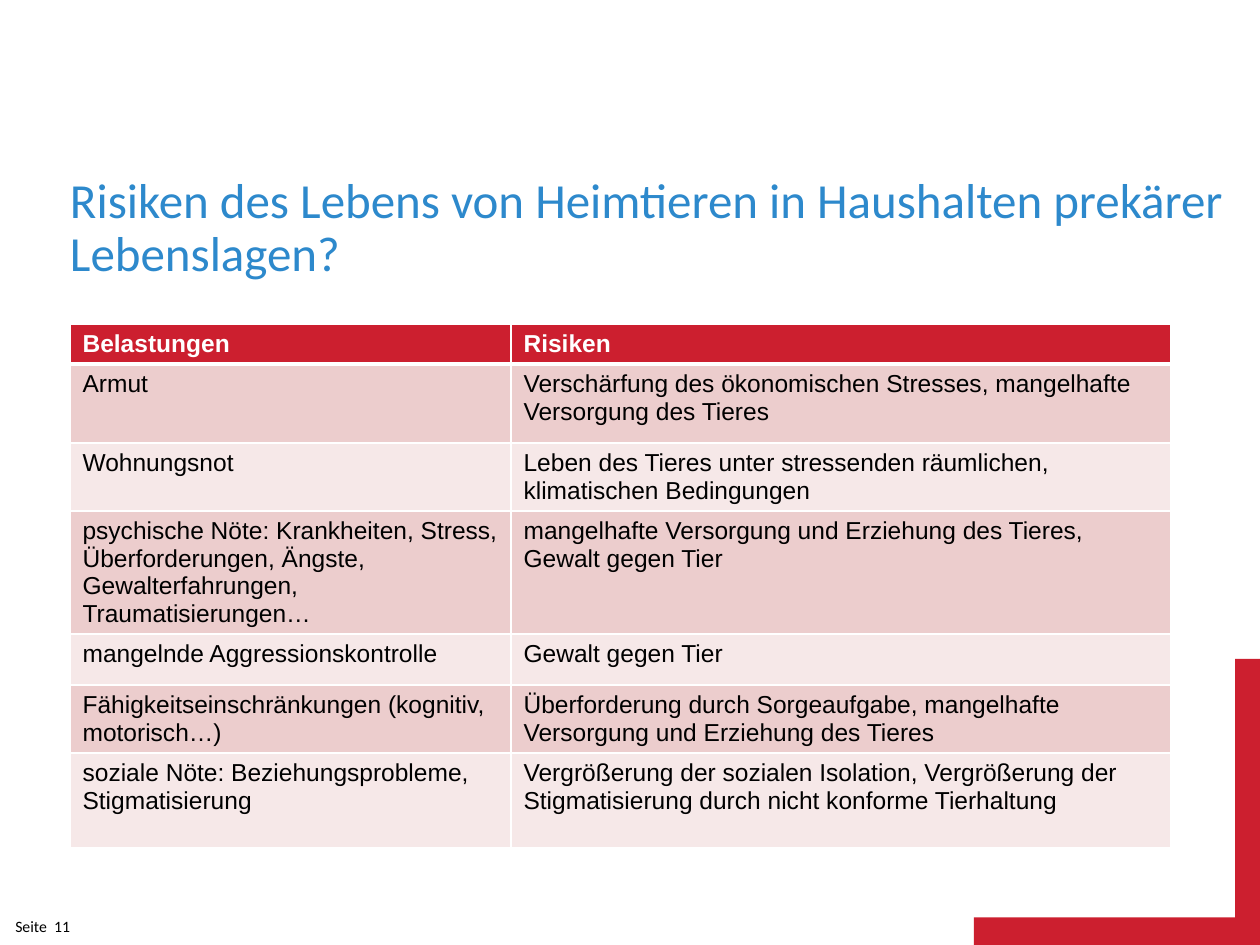
from typing import NamedTuple

from lxml import etree
from pptx import Presentation
from pptx import util as u
from pptx.dml.color import RGBColor
from pptx.enum import shapes, text
from pptx.oxml.ns import qn

EMU_PER_PX = 914400 / 126
COLORS = {"red": "CC1F2F", "blue": "2D89CC", "rose": "ECCDCD",
          "pale": "F6E8E8", "white": "FFFFFF", "black": "000000"}


class Box(NamedTuple):
    x: int
    y: int
    w: int
    h: int


class Row(NamedTuple):
    height: int
    burden: str
    risk: str


PAGE = (1260, 945)
CORNER_BOX = Box(974, 659, 287, 287)
TITLE_BOX = Box(70, 146, 1176, 136)
NUMBER_BOX = Box(0, 917, 70, 19)
TABLE_BOX = Box(70, 324, 1101, 524)
COLUMNS = (441, 660)
ROWS = [
    Row(40, "Belastungen", "Risiken"),
    Row(79, "Armut",
        "Verschärfung des ökonomischen Stresses, mangelhafte Versorgung des Tieres"),
    Row(68, "Wohnungsnot",
        "Leben des Tieres unter stressenden räumlichen, klimatischen Bedingungen"),
    Row(123, "psychische Nöte: Krankheiten, Stress, Überforderungen, Ängste, "
        "Gewalterfahrungen, Traumatisierungen…",
        "mangelhafte Versorgung und Erziehung des Tieres, Gewalt gegen Tier"),
    Row(51, "mangelnde Aggressionskontrolle", "Gewalt gegen Tier"),
    Row(68, "Fähigkeitseinschränkungen (kognitiv, motorisch…)",
        "Überforderung durch Sorgeaufgabe, mangelhafte Versorgung und Erziehung des Tieres"),
    Row(95, "soziale Nöte: Beziehungsprobleme, Stigmatisierung",
        "Vergrößerung der sozialen Isolation, Vergrößerung der Stigmatisierung "
        "durch nicht konforme Tierhaltung"),
]


def px(n: int) -> int:
    return round(n * EMU_PER_PX)


def emu(box: Box) -> list[int]:
    return [px(n) for n in box]


def rgb(name: str) -> RGBColor:
    return RGBColor.from_string(COLORS[name])


def apply(target, values: dict) -> None:
    for name, value in values.items():
        setattr(target, name, value)


def write(tf, words: str, color: str, font: dict, para: dict) -> None:
    p = tf.paragraphs[0]
    apply(p, para)
    r = p.add_run()
    r.text = words
    apply(r.font, font)
    r.font.color.rgb = rgb(color)


def fill(target, color: str) -> None:
    target.fill.solid()
    target.fill.fore_color.rgb = rgb(color)


def border(cell, widths: dict[str, int]) -> None:
    """Put white lines, widths in points, ahead of the cell's fill."""
    pr = cell._tc.get_or_add_tcPr()
    for i, (side, width) in enumerate(widths.items()):
        ln = etree.Element(qn(f"a:{side}"), w=str(int(u.Pt(width))))
        solid = etree.SubElement(ln, qn("a:solidFill"))
        etree.SubElement(solid, qn("a:srgbClr"), val=COLORS["white"])
        pr.insert(i, ln)


def draw_corner(s) -> None:
    sp = s.shapes.add_shape(shapes.MSO_SHAPE.CORNER, *emu(CORNER_BOX))
    sp.adjustments[0], sp.adjustments[1] = 0.1, 0.09
    sp._element.spPr.xfrm.set("flipH", "1")
    sp.shadow.inherit = False
    fill(sp, "red")
    sp.line.fill.background()


def draw_text(sp, box: Box, words: str, color: str, size: int,
              para: dict, wrap: bool) -> None:
    apply(sp, dict(zip(("left", "top", "width", "height"), emu(box))))
    tf = sp.text_frame
    apply(tf, {"margin_left": 0, "margin_top": 0, "margin_right": 0,
               "margin_bottom": 0, "word_wrap": wrap,
               "auto_size": text.MSO_AUTO_SIZE.NONE,
               "vertical_anchor": text.MSO_ANCHOR.BOTTOM})
    write(tf, words, color, {"name": "Calibri", "size": u.Pt(size)}, para)


def draw_table(s, rows: list[Row]) -> None:
    table = s.shapes.add_table(len(rows), len(COLUMNS), *emu(TABLE_BOX)).table
    for column, width in zip(table.columns, COLUMNS):
        column.width = px(width)
    for i, row in enumerate(rows):
        table.rows[i].height = px(row.height)
        head = i == 0
        shade = "red" if head else ("pale", "rose")[i % 2]
        for j, words in enumerate((row.burden, row.risk)):
            cell = table.cell(i, j)
            fill(cell, shade)
            border(cell, {"lnL": 1, "lnR": 1, "lnT": 3 if i == 1 else 1,
                          "lnB": 3 if head else 1})
            write(cell.text_frame, words, "white" if head else "black",
                  {"name": "Arial", "size": u.Pt(14), "bold": head}, {})


def main() -> None:
    prs = Presentation()
    prs.slide_width, prs.slide_height = map(px, PAGE)
    s = prs.slides.add_slide(prs.slide_layouts[5])

    # Corner ornament
    draw_corner(s)

    # Title and page number
    draw_text(s.shapes.title, TITLE_BOX,
              "Risiken des Lebens von Heimtieren in Haushalten prekärer Lebenslagen?",
              "blue", 28, {"alignment": text.PP_ALIGN.LEFT, "line_spacing": 0.9}, True)
    draw_text(s.shapes.add_textbox(*emu(NUMBER_BOX)), NUMBER_BOX, "Seite  11",
              "black", 9, {"alignment": text.PP_ALIGN.RIGHT}, False)

    # Burdens and the risks that follow
    draw_table(s, ROWS)
    prs.save("out.pptx")


if __name__ == "__main__":
    main()
